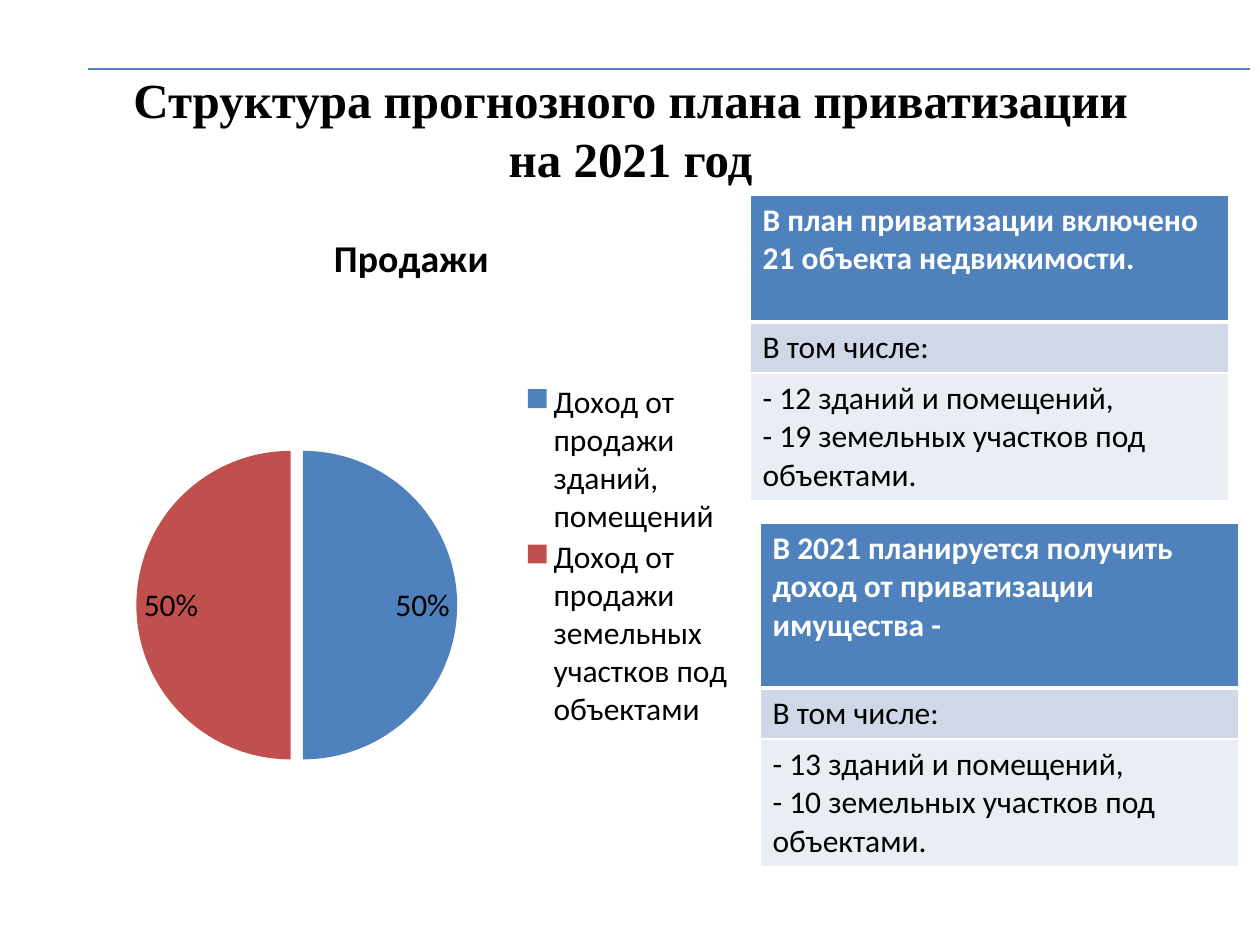
import pptx
import pptx.chart.data
import pptx.dml.color
import pptx.enum.chart
import pptx.enum.shapes
import pptx.enum.text
import pptx.oxml
import pptx.oxml.ns
import pptx.util

PX = 914400 // 126
BLACK = pptx.dml.color.RGBColor(0x00, 0x00, 0x00)
WHITE = pptx.dml.color.RGBColor(0xFF, 0xFF, 0xFF)
BLUE = pptx.dml.color.RGBColor(0x4F, 0x81, 0xBD)
RED = pptx.dml.color.RGBColor(0xC0, 0x50, 0x4D)
PALE_BLUE = pptx.dml.color.RGBColor(0xD0, 0xD8, 0xE8)
PALEST_BLUE = pptx.dml.color.RGBColor(0xE9, 0xED, 0xF4)


def write_text(frame, text, size=18, font="Calibri", color=BLACK, bold=False, align=None):
    frame.text = text
    frame.word_wrap = True
    for paragraph in frame.paragraphs:
        paragraph.alignment = align
        for run in paragraph.runs:
            run.font.size = pptx.util.Pt(size)
            run.font.name = font
            run.font.bold = bold
            run.font.color.rgb = color


def add_layout(element, index, x, y, w, h, inner=False):
    target = '<c:layoutTarget val="inner"/>' if inner else ""
    layout = pptx.oxml.parse_xml(
        f'<c:layout {pptx.oxml.ns.nsdecls("c")}><c:manualLayout>{target}'
        '<c:xMode val="edge"/><c:yMode val="edge"/>'
        f'<c:x val="{x}"/><c:y val="{y}"/><c:w val="{w}"/><c:h val="{h}"/>'
        '</c:manualLayout></c:layout>')
    for old in element.findall(pptx.oxml.ns.qn("c:layout")):
        element.remove(old)
    element.insert(index, layout)


deck = pptx.Presentation()
deck.slide_width = 1260 * PX
deck.slide_height = 945 * PX
slide = deck.slides.add_slide(deck.slide_layouts[6])

rule = slide.shapes.add_connector(
    pptx.enum.shapes.MSO_CONNECTOR.STRAIGHT, 88 * PX, 69 * PX, 1250 * PX, 69 * PX)
rule.line.color.rgb = BLUE
rule.line.width = pptx.util.Pt(1.25)
rule._element.spPr.append(
    pptx.oxml.parse_xml(f'<a:effectLst {pptx.oxml.ns.nsdecls("a")}/>'))

heading = slide.shapes.add_textbox(35 * PX, 69 * PX, 1191 * PX, 118 * PX)
write_text(heading.text_frame, "Структура прогнозного плана приватизации\vна 2021 год",
           size=28, font="Times New Roman", bold=True,
           align=pptx.enum.text.PP_ALIGN.CENTER)
heading.text_frame.vertical_anchor = pptx.enum.text.MSO_ANCHOR.MIDDLE

plans = [
    (750, 195, 127, "В план приватизации включено 21 объекта недвижимости.",
     "- 12 зданий и помещений,\n- 19 земельных участков под объектами."),
    (760, 523, 165, "В 2021 планируется получить доход от приватизации имущества -",
     "- 13 зданий и помещений,\n- 10 земельных участков под объектами."),
]
for left, top, header_height, header, details in plans:
    rows = [
        (header, header_height, BLUE, WHITE, True),
        ("В том числе:", 51, PALE_BLUE, BLACK, False),
        (details, 128, PALEST_BLUE, BLACK, False),
    ]
    height = sum(row[1] for row in rows)
    plan = slide.shapes.add_table(3, 1, left * PX, top * PX, 479 * PX, height * PX).table
    for index, (text, row_height, fill, color, bold) in enumerate(rows):
        plan.rows[index].height = row_height * PX
        cell = plan.cell(index, 0)
        write_text(cell.text_frame, text, color=color, bold=bold)
        cell.fill.solid()
        cell.fill.fore_color.rgb = fill
        for position, side in enumerate("LRTB"):
            thick = (index, side) in ((0, "B"), (1, "T"))
            border = pptx.oxml.parse_xml(
                f'<a:ln{side} {pptx.oxml.ns.nsdecls("a")} w="{38100 if thick else 12700}">'
                f'<a:solidFill><a:srgbClr val="{WHITE}"/></a:solidFill></a:ln{side}>')
            cell._tc.get_or_add_tcPr().insert(position, border)

sales = pptx.chart.data.CategoryChartData()
sales.categories = ["Доход от продажи зданий, помещений",
                    "Доход от продажи земельных участков под объектами"]
sales.add_series("Продажи", (50, 50))
chart = slide.shapes.add_chart(
    pptx.enum.chart.XL_CHART_TYPE.PIE, 84 * PX, 204 * PX, 655 * PX, 704 * PX, sales).chart
chart.font.size = pptx.util.Pt(18)
chart.font.name = "Calibri"
chart.font.color.rgb = BLACK
chart.has_title = True
write_text(chart.chart_title.text_frame, "Продажи", size=21.6, bold=True)

chart.has_legend = True
chart.legend.position = pptx.enum.chart.XL_LEGEND_POSITION.RIGHT
chart.legend.include_in_layout = False
add_layout(chart.legend._element, 1, 0.66, 0.25, 0.34, 0.5)

pie = chart.plots[0]
pie.vary_by_categories = True
add_layout(chart._chartSpace.chart.plotArea, 0, 0.08, 0.34, 0.49, 0.46, inner=True)
for index, color in enumerate((BLUE, RED)):
    slice_fill = pie.series[0].points[index].format.fill
    slice_fill.solid()
    slice_fill.fore_color.rgb = color
explosion = pptx.oxml.parse_xml(f'<c:explosion {pptx.oxml.ns.nsdecls("c")} val="4"/>')
pie.series[0]._element.find(pptx.oxml.ns.qn("c:dPt")).addprevious(explosion)

pie.has_data_labels = True
shares = pie.data_labels
shares.show_percentage = True
shares.show_value = False
shares.number_format = "0%"
shares.number_format_is_linked = False
shares.position = pptx.enum.chart.XL_LABEL_POSITION.INSIDE_END
shares.font.size = pptx.util.Pt(18)
shares.font.color.rgb = BLACK

deck.save("out.pptx")
